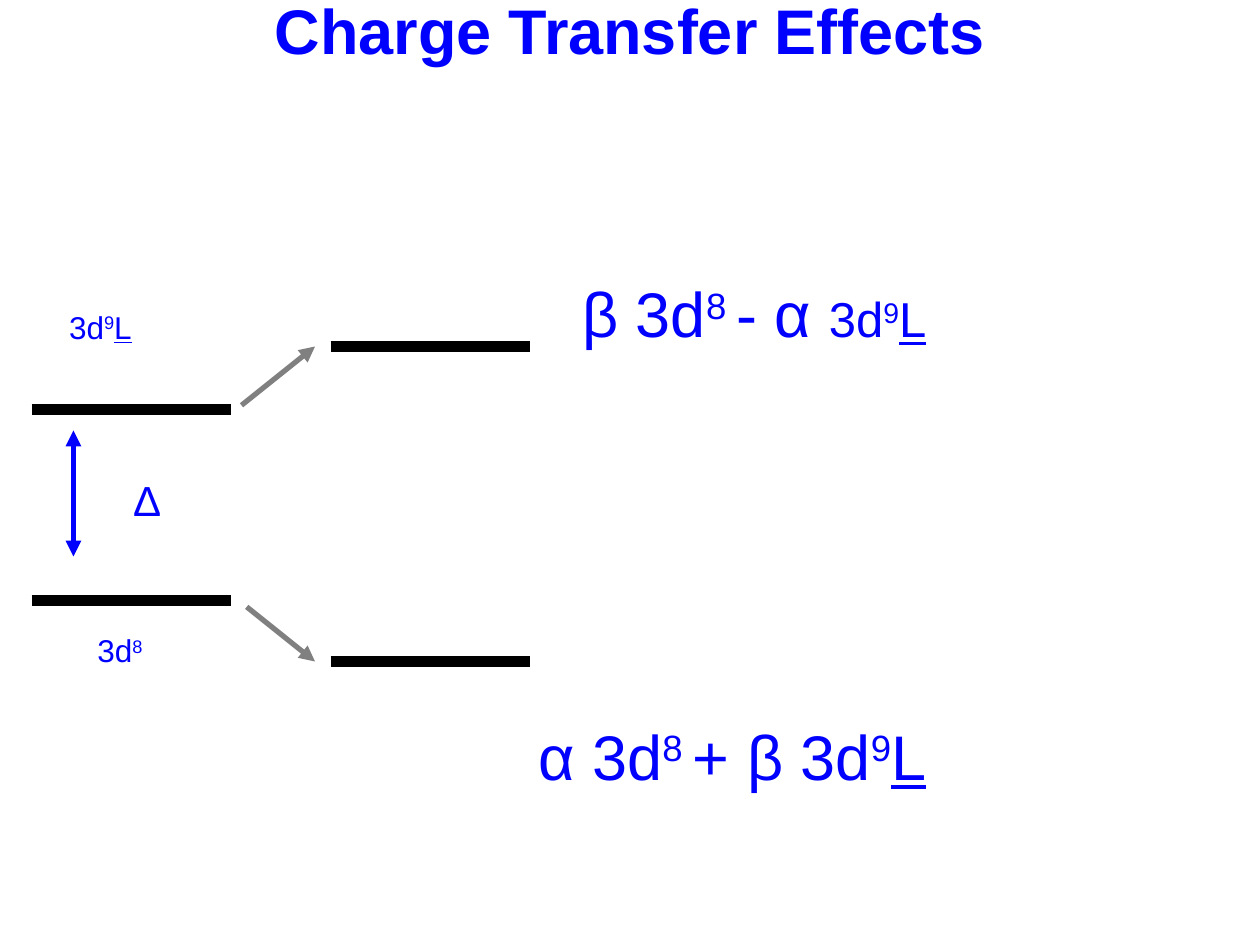
"""Build a slide showing energy levels mixed by charge transfer."""
from typing import NamedTuple

from lxml.etree import SubElement
from pptx import Presentation
from pptx.dml.color import RGBColor
from pptx.enum.shapes import MSO_CONNECTOR
from pptx.enum.text import MSO_ANCHOR, MSO_AUTO_SIZE, PP_ALIGN
from pptx.oxml.ns import qn
from pptx.util import Inches, Pt

BLUE = RGBColor(0x00, 0x00, 0xFF)
BLACK = RGBColor(0x00, 0x00, 0x00)
GRAY = RGBColor(0x80, 0x80, 0x80)
FONT = "Arial"
COLS, ROWS = 120, 90
WIDTH, HEIGHT = Inches(10), Inches(7.5)


class Line(NamedTuple):
    start: tuple[float, float]
    end: tuple[float, float]
    color: RGBColor
    weight: float
    ends: tuple[str, ...] = ()


class Run(NamedTuple):
    text: str
    size: float
    raised: bool = False
    underline: bool = False


class Label(NamedTuple):
    box: tuple[float, float, float, float]
    runs: list[Run]
    align: PP_ALIGN = PP_ALIGN.LEFT


def col(n: float) -> int:
    return round(WIDTH * n / COLS)


def row(n: float) -> int:
    return round(HEIGHT * n / ROWS)


def level(left: float, y: float) -> Line:
    return Line((left, y), (left + 19, y), BLACK, 6)


def d8(size: float, gap: str = "") -> list[Run]:
    return [Run("3d", size), Run("8" + gap, size, raised=True)]


def d9_hole(size: float) -> list[Run]:
    return [Run("3d", size), Run("9", size, raised=True), Run("L", size, underline=True)]


LINES = [
    level(3, 57.2),
    level(3, 39),
    level(31.5, 33),
    level(31.5, 63),
    Line((7, 41), (7, 53), BLUE, 3, ("headEnd", "tailEnd")),
    Line((23.5, 57.8), (30, 63), GRAY, 3, ("tailEnd",)),
    Line((23, 38.6), (30, 33), GRAY, 3, ("tailEnd",)),
]

LABELS = [
    Label((49, 25.6, 40.4, 7.7),
          [Run("β ", 36), *d8(36, " "), Run("- α ", 36), *d9_hole(28)], PP_ALIGN.RIGHT),
    Label((49, 67.7, 40.4, 7.7),
          [Run("α ", 36), *d8(36, " "), Run("+ β ", 36), *d9_hole(36)], PP_ALIGN.RIGHT),
    Label((11.5, 44.6, 4.8, 6), [Run("Δ", 24)], PP_ALIGN.RIGHT),
    Label((8.1, 59.5, 9.5, 6.8), d8(18)),
    Label((5.4, 28.7, 12, 6.8), d9_hole(18)),
]


def set_format(target, **values) -> None:
    for name, value in values.items():
        setattr(target, name, value)


def set_font(font, **values) -> None:
    set_format(font, name=FONT, **values)
    font.color.rgb = BLUE


def draw_line(shapes, line: Line) -> None:
    (x1, y1), (x2, y2) = line.start, line.end
    sp = shapes.add_connector(MSO_CONNECTOR.STRAIGHT, col(x1), row(y1), col(x2), row(y2))
    sp.line.color.rgb = line.color
    sp.line.width = Pt(line.weight)
    ln = sp.line._get_or_add_ln()
    for end in line.ends:
        SubElement(ln, qn(f"a:{end}")).set("type", "triangle")
    SubElement(sp._element.spPr, qn("a:effectLst"))


def draw_label(shapes, label: Label) -> None:
    x, y, w, h = label.box
    tf = shapes.add_textbox(col(x), row(y), col(w), row(h)).text_frame
    tf.word_wrap = True
    p = tf.paragraphs[0]
    p.alignment = label.align
    for run in label.runs:
        r = p.add_run()
        r.text = run.text
        set_font(r.font, size=Pt(run.size), underline=run.underline)
        if run.raised:
            r._r.get_or_add_rPr().set("baseline", "30000")


def draw_title(sp, text: str) -> None:
    set_format(sp, left=0, top=0, width=WIDTH, height=row(7))
    tf = sp.text_frame
    set_format(tf, text=text, word_wrap=True, auto_size=MSO_AUTO_SIZE.NONE,
               vertical_anchor=MSO_ANCHOR.MIDDLE)
    p = tf.paragraphs[0]
    set_format(p, alignment=PP_ALIGN.CENTER, line_spacing=0.8)
    set_font(p.runs[0].font, size=Pt(36), bold=True)


def main() -> None:
    prs = Presentation()
    set_format(prs, slide_width=WIDTH, slide_height=HEIGHT)
    s = prs.slides.add_slide(prs.slide_layouts[5])
    draw_title(s.shapes.title, "Charge Transfer Effects")
    for line in LINES:
        draw_line(s.shapes, line)
    for label in LABELS:
        draw_label(s.shapes, label)
    prs.save("out.pptx")


if __name__ == "__main__":
    main()
